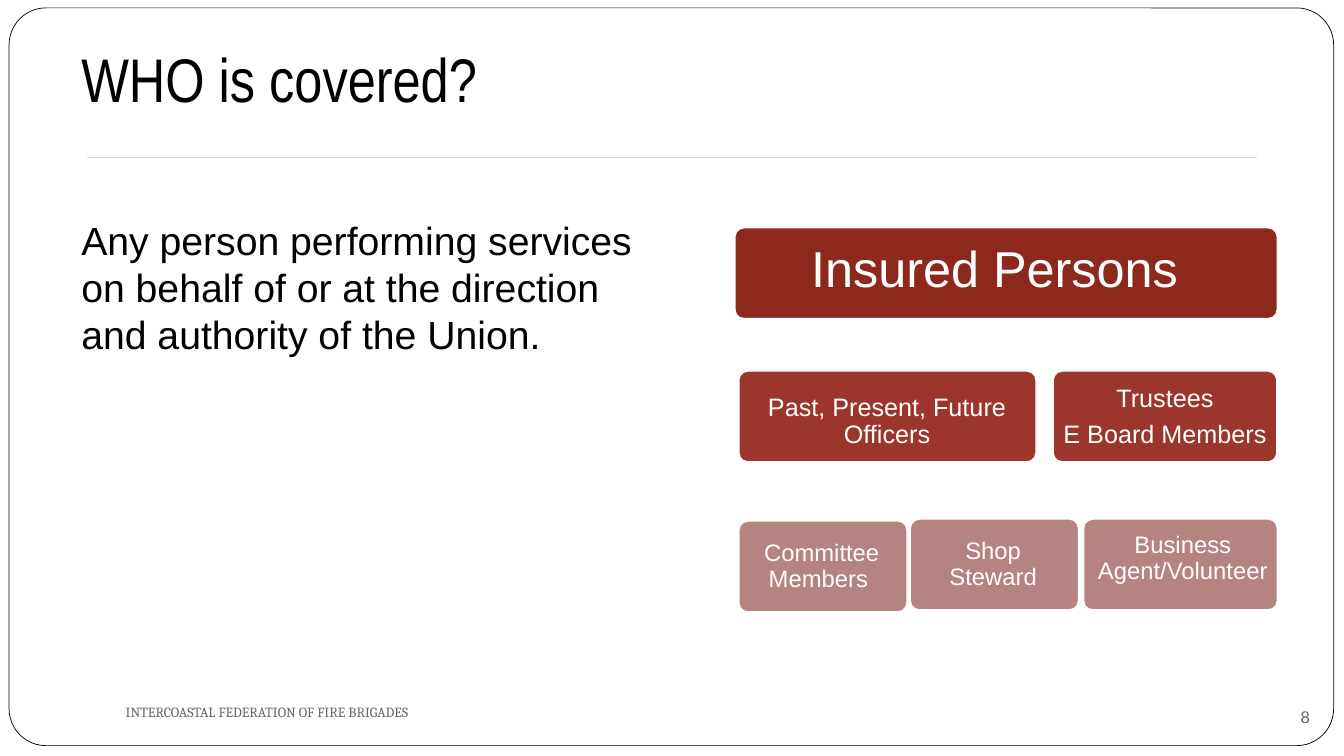
from pptx import Presentation
from pptx.dml.color import RGBColor
from pptx.enum.shapes import MSO_CONNECTOR, MSO_SHAPE
from pptx.enum.text import MSO_ANCHOR, MSO_AUTO_SIZE, PP_ALIGN
from pptx.oxml.ns import qn
from pptx.util import Cm, Pt
from lxml import etree

ROUNDED = MSO_SHAPE.ROUNDED_RECTANGLE
STRAIGHT = MSO_CONNECTOR.STRAIGHT
TOP, MIDDLE = MSO_ANCHOR.TOP, MSO_ANCHOR.MIDDLE
LEFT, CENTER, RIGHT = PP_ALIGN.LEFT, PP_ALIGN.CENTER, PP_ALIGN.RIGHT
NO_AUTOFIT = MSO_AUTO_SIZE.NONE
TITLE_ONLY = 5

BLACK, WHITE, GRAY, PALE_BLUE = "000000", "FFFFFF", "696464", "CCDDF1"
DARK_RED, RED, PINK = "8D291C", "9C362C", "B58380"
BOX_HEIGHT = 2.29

# left, top, width, fill, text size, inset, text shift (x, y), paragraphs
INSURED_BOXES = [
    (0, 0, 13.67, DARK_RED, 36, 0.38, (-0.29, -0.06), ["Insured Persons"]),
    (0.1, 3.61, 7.49, RED, 18, 0.18, (-0.01, 0.14), ["Past, Present, Future Officers"]),
    (8.02, 3.61, 5.64, RED, 18, 0.18, (0, 0.01), ["Trustees", "E Board Members "]),
    (0.1, 7.39, 4.24, PINK, 17, 0.18, (-0.03, 0.01), ["Committee Members "]),
    (4.42, 7.34, 4.24, PINK, 17, 0.18, (-0.03, 0.01), ["Shop Steward"]),
    (8.79, 7.34, 4.88, PINK, 17, 0.18, (0.06, -0.14), ["Business Agent/Volunteer"]),
]


def color(hex_string):
    return RGBColor.from_string(hex_string)


def write_text(shape, paragraphs, size, font="Arial", text_color=BLACK, align=LEFT,
               anchor=TOP, line_spacing=1.0, before=0, after=0,
               margins=(0.25, 0.13, 0.25, 0.13)):
    """Fill the shape with paragraphs; margins are left, top, right, bottom in cm."""
    frame = shape.text_frame
    frame.word_wrap = True
    frame.auto_size = NO_AUTOFIT
    frame.vertical_anchor = anchor
    (frame.margin_left, frame.margin_top,
     frame.margin_right, frame.margin_bottom) = map(Cm, margins)
    for index, text in enumerate(paragraphs):
        paragraph = frame.add_paragraph() if index else frame.paragraphs[0]
        paragraph.alignment = align
        paragraph.line_spacing = line_spacing
        paragraph.space_before = Pt(before)
        paragraph.space_after = Pt(after)
        run = paragraph.add_run()
        run.text = text
        run.font.size = Pt(size)
        run.font.name = font
        run.font.color.rgb = color(text_color)


def add_text(slide, box, text, size, **text_format):
    write_text(slide.shapes.add_textbox(*map(Cm, box)), [text], size, **text_format)


def add_rounded(slide, box, fill, line, line_width, corner):
    shape = slide.shapes.add_shape(ROUNDED, *map(Cm, box))
    shape.shadow.inherit = False
    shape.adjustments[0] = corner
    shape.fill.solid()
    shape.fill.fore_color.rgb = color(fill)
    shape.line.color.rgb = color(line)
    shape.line.width = Pt(line_width)
    return shape


def add_frame(slide, box):
    """Draw the page outline with its rule, footer and slide number."""
    left, top, width, height = box
    add_rounded(slide, box, WHITE, BLACK, 0.5, 0.05)
    rule_top = Cm(top + 3.76)
    rule = slide.shapes.add_connector(
        STRAIGHT, Cm(left + 1.95), rule_top, Cm(left + width - 1.93), rule_top)
    rule.line.color.rgb = color(PALE_BLUE)
    rule.line.width = Pt(0.75)
    etree.SubElement(rule.element.spPr, qn("a:effectLst"))
    add_text(slide, (left + 2.69, top + 17.45, 21.87, 0.64),
             "INTERCOASTAL FEDERATION OF FIRE BRIGADES", 10,
             font="Cambria", text_color=GRAY, line_spacing=0.9)
    add_text(slide, (left + width - 1.42, top + 17.35, 1.07, 1.02), "8", 12,
             text_color=GRAY, align=RIGHT, anchor=MIDDLE)


def place_title(slide, box, text):
    title = slide.shapes.title
    title.left, title.top, title.width, title.height = map(Cm, box)
    write_text(title, [text], 44, font="Arial Narrow", line_spacing=0.9, before=10)
    # Bring the title in front of the filled frame
    title.element.getparent().append(title.element)


def add_insured_persons(slide, box):
    region_left, region_top = box[:2]
    for left, top, width, fill, size, inset, (shift_x, shift_y), lines in INSURED_BOXES:
        shape = add_rounded(
            slide, (region_left + left, region_top + top, width, BOX_HEIGHT),
            fill, WHITE, 1, 0.1)
        write_text(shape, lines, size, text_color=WHITE, align=CENTER, anchor=MIDDLE,
                   line_spacing=0.9, after=size * 0.35,
                   margins=(inset + shift_x, inset + shift_y,
                            inset - shift_x, inset - shift_y))


def main():
    presentation = Presentation()
    presentation.slide_width, presentation.slide_height = Cm(33.87), Cm(19.05)
    slide = presentation.slides.add_slide(presentation.slide_layouts[TITLE_ONLY])
    add_frame(slide, (0.23, 0.2, 33.38, 18.59))
    place_title(slide, (1.8, 1.12, 29.69, 2.03), "WHO is covered?")
    add_text(slide, (1.8, 5.31, 15.44, 7.29),
             "Any person performing services on behalf of or at the direction "
             "and authority of the Union.", 28, before=10)
    add_insured_persons(slide, (18.52, 5.74, 13.67, 9.68))
    presentation.save("out.pptx")


if __name__ == "__main__":
    main()
